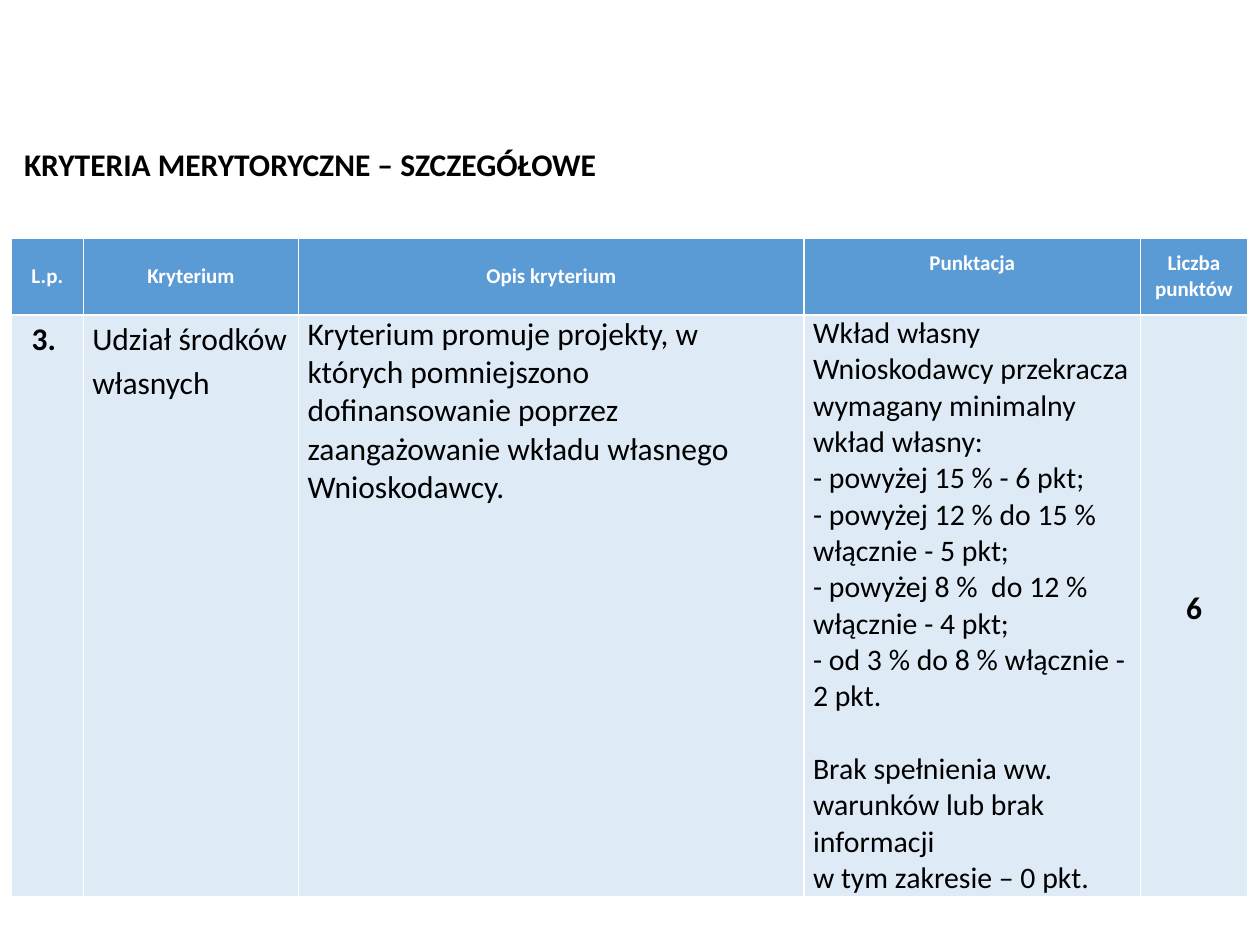
from pptx import Presentation
from pptx.dml.color import RGBColor
from pptx.enum.text import MSO_ANCHOR as Anchor, MSO_AUTO_SIZE as AutoSize, PP_ALIGN as Align
from pptx.util import Cm, Pt

# Content
TITLE = "KRYTERIA MERYTORYCZNE – SZCZEGÓŁOWE"
HEADERS = ["L.p.", "Kryterium", "Opis kryterium", "Punktacja", "Liczba punktów"]
SCORING = [
    "Wkład własny Wnioskodawcy przekracza wymagany minimalny wkład własny:",
    "- powyżej 15 % - 6 pkt;",
    "- powyżej 12 % do 15 % włącznie - 5 pkt;",
    "- powyżej 8 %  do 12 %  włącznie - 4 pkt;",
    "- od 3 % do 8 % włącznie - 2 pkt.",
    "Brak spełnienia ww. warunków lub brak informacji \nw tym zakresie – 0 pkt.",
]
DESCRIPTION = ("Kryterium promuje projekty, w których pomniejszono dofinansowanie "
               "poprzez zaangażowanie wkładu własnego Wnioskodawcy.")
# Body cells: paragraphs, size, bold, alignment, anchor, line spacing
BODY = [
    (["3. "], 18, True, Align.CENTER, Anchor.TOP, 1.15),
    (["Udział środków własnych"], 18, False, Align.LEFT, Anchor.TOP, 1.15),
    ([DESCRIPTION], 18, False, Align.LEFT, Anchor.TOP, 1),
    (SCORING, 17, False, Align.LEFT, Anchor.TOP, 1),
    (["6"], 18, True, Align.CENTER, Anchor.MIDDLE, 1.15),
]
COL_WIDTHS = [1.45, 4.34, 10.19, 6.78, 2.16]
ROW_HEIGHTS = [1.55, 11.7]
LEFT = 0.23


def rgb(value):
    return RGBColor.from_string(value)


def style(p, size, color, bold, align, spacing=1):
    p.alignment, p.line_spacing = align, spacing
    font = p.font
    font.name, font.size, font.bold = "Calibri", Pt(size), bold
    font.color.rgb = rgb(color)


def fill_cell(cell, lines, fill, color, size, bold, align, anchor, spacing=1):
    cell.fill.solid()
    cell.fill.fore_color.rgb = rgb(fill)
    cell.vertical_anchor = anchor
    tf = cell.text_frame
    for i, line in enumerate(lines):
        p = tf.add_paragraph() if i else tf.paragraphs[0]
        p.text = line
        style(p, size, color, bold, align, spacing)


prs = Presentation()
prs.slide_width, prs.slide_height = Cm(25.4), Cm(19.05)
s = prs.slides.add_slide(prs.slide_layouts[5])

# Title
title = s.shapes.title
title.left, title.top, title.width, title.height = Cm(LEFT), Cm(2.8), Cm(12.45), Cm(1.02)
tf = title.text_frame
tf.text = TITLE
tf.word_wrap, tf.auto_size = False, AutoSize.NONE
tf.vertical_anchor = Anchor.MIDDLE
style(tf.paragraphs[0], 18, "000000", True, Align.LEFT)

# Criteria table
table = s.shapes.add_table(2, len(HEADERS), Cm(LEFT), Cm(4.8),
                           Cm(sum(COL_WIDTHS)), Cm(sum(ROW_HEIGHTS))).table
for column, width in zip(table.columns, COL_WIDTHS):
    column.width = Cm(width)
for row, height in zip(table.rows, ROW_HEIGHTS):
    row.height = Cm(height)

for i, (header, body) in enumerate(zip(HEADERS, BODY)):
    fill_cell(table.cell(0, i), [header], "5B9BD5", "FFFFFF", 12, True,
              Align.CENTER, Anchor.MIDDLE)
    cell = table.cell(1, i)
    cell.margin_left = cell.margin_right = Cm(0.18)
    cell.margin_top = cell.margin_bottom = 0
    lines, *look = body
    fill_cell(cell, lines, "DEEBF7", "000000", *look)

# The scoring header sits high; its closing note stands one line apart
scoring = HEADERS.index("Punktacja")
table.cell(0, scoring).vertical_anchor = Anchor.TOP
table.cell(0, scoring).margin_top = Cm(0.25)
table.cell(1, scoring).text_frame.paragraphs[-1].space_before = Pt(20.7)

prs.save("out.pptx")
